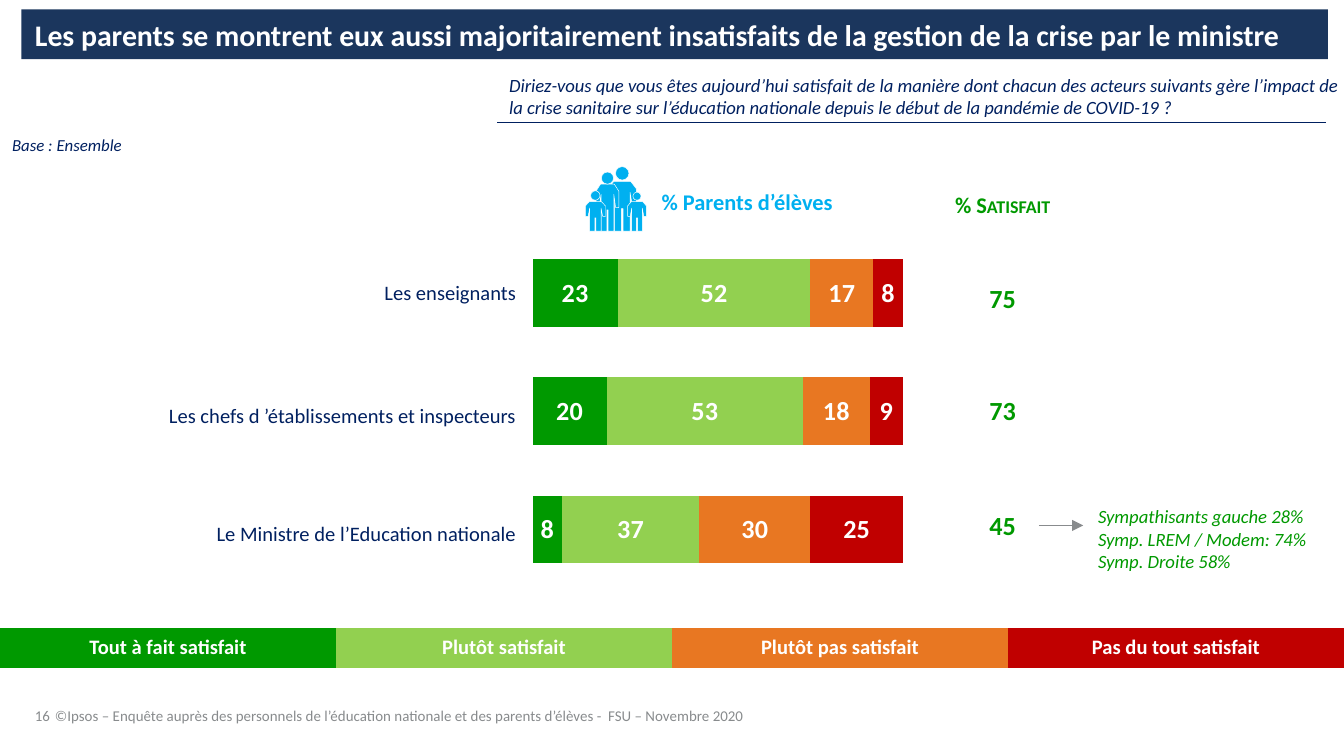
from lxml import etree
from pptx import Presentation
from pptx.chart.data import CategoryChartData
from pptx.dml.color import RGBColor
from pptx.enum.chart import XL_CHART_TYPE
from pptx.enum.shapes import MSO_CONNECTOR, MSO_SHAPE
from pptx.enum.text import MSO_ANCHOR, MSO_AUTO_SIZE, PP_ALIGN
from pptx.oxml import parse_xml
from pptx.oxml.ns import nsdecls, qn
from pptx.util import Inches, Pt

NAVY = RGBColor(0x1B, 0x36, 0x5D)
INK = RGBColor(0x00, 0x20, 0x60)
GREY = RGBColor(0x88, 0x8B, 0x8D)
SKY = RGBColor(0x00, 0xB0, 0xF0)
WHITE = RGBColor(0xFF, 0xFF, 0xFF)
GREEN = RGBColor(0x00, 0x99, 0x00)
LIME = RGBColor(0x92, 0xD0, 0x50)
ORANGE = RGBColor(0xE8, 0x77, 0x22)
RED = RGBColor(0xC0, 0x00, 0x00)

LEFT, CENTER, RIGHT = PP_ALIGN.LEFT, PP_ALIGN.CENTER, PP_ALIGN.RIGHT
TOP, MIDDLE, BOTTOM = MSO_ANCHOR.TOP, MSO_ANCHOR.MIDDLE, MSO_ANCHOR.BOTTOM
NO_AUTOFIT = MSO_AUTO_SIZE.NONE
STACKED_BAR = XL_CHART_TYPE.BAR_STACKED_100
STRAIGHT = MSO_CONNECTOR.STRAIGHT
OVAL = MSO_SHAPE.OVAL

FONT = "Calibri"
PLAIN_TABLE_STYLE = "{2D5ABB26-0587-4C30-8999-92F81FD0307C}"

ANSWERS = [
    ("Tout à fait satisfait", GREEN, (23, 20, 8)),
    ("Plutôt satisfait", LIME, (52, 53, 37)),
    ("Plutôt pas satisfait", ORANGE, (17, 18, 30)),
    ("Pas du tout satisfait", RED, (8, 9, 25)),
]
ACTORS = [
    "Les enseignants",
    "Les chefs d\u00a0’établissements et inspecteurs",
    "Le Ministre de l’Education nationale",
]
FAMILY = [
    (4.63, 1.24, 0.10, 0.21, 1.35),
    (4.52, 1.28, 0.09, 0.17, 1.37),
    (4.43, 1.42, 0.07, 0.15, 1.5),
    (4.74, 1.43, 0.06, 0.14, 1.5),
]
HALF_BODY = [(-0.3, 0), (-0.5, 0.15), (-0.5, 0.5), (-0.36, 0.5),
             (-0.28, 0.22), (-0.28, 1), (-0.03, 1), (-0.03, 0.55)]


def style_font(font, size, color, bold=False, italic=False):
    font.name = FONT
    font.size = Pt(size)
    font.color.rgb = color
    font.bold = bold
    font.italic = italic


def style_frame(frame, size, color, bold=False, italic=False, align=LEFT):
    for para in frame.paragraphs:
        para.alignment = align
        for span in para.runs:
            style_font(span.font, size, color, bold, italic)


def place(shape, area):
    shape.left, shape.top, shape.width, shape.height = map(Inches, area)


def add_title(page, text):
    title = page.shapes.title
    place(title, (0.16, 0.07, 9.72, 0.37))
    title.fill.solid()
    title.fill.fore_color.rgb = NAVY
    frame = title.text_frame
    frame.text = text
    frame.auto_size = NO_AUTOFIT
    frame.vertical_anchor = MIDDLE
    style_frame(frame, 16, WHITE, bold=True)


def add_text(page, area, text, size, color, anchor=TOP, inset=True, wrap=True, **style):
    box = page.shapes.add_textbox(*map(Inches, area))
    frame = box.text_frame
    frame.word_wrap = wrap
    frame.vertical_anchor = anchor
    if not inset:
        frame.margin_left = frame.margin_right = 0
        frame.margin_top = frame.margin_bottom = 0
    frame.text = text
    style_frame(frame, size, color, **style)
    return frame


def add_line(page, start, end, color, width, arrow=False):
    line = page.shapes.add_connector(STRAIGHT, *map(Inches, start + end))
    line.line.color.rgb = color
    line.line.width = Pt(width)
    if arrow:
        etree.SubElement(line.line._get_or_add_ln(), qn("a:tailEnd"), type="triangle")
    etree.SubElement(line._element.spPr, qn("a:effectLst"))


def add_table(page, area, heights, columns=1):
    frame = page.shapes.add_table(len(heights), columns, *map(Inches, area))
    table = frame.table
    table.first_row = table.horz_banding = False
    table._tbl.tblPr[0].text = PLAIN_TABLE_STYLE
    for row, height in zip(table.rows, heights):
        row.height = Inches(height)
    return table


def fill_cell(cell, text, size, color, fill=None, tight=True, **style):
    cell.text = text
    cell.vertical_anchor = MIDDLE
    if tight:
        cell.margin_left = cell.margin_right = cell.margin_top = Inches(0.01)
        cell.margin_bottom = 0
    if fill is None:
        cell.fill.background()
    else:
        cell.fill.solid()
        cell.fill.fore_color.rgb = fill
    style_frame(cell.text_frame, size, color, **style)


def add_legend(page):
    table = add_table(page, (0, 4.67, 10, 0.3), [0.3], len(ANSWERS))
    for cell, (label, color, _) in zip(table.iter_cells(), ANSWERS):
        fill_cell(cell, label, 11, WHITE, color, tight=False, bold=True, align=CENTER)


def add_actors(page):
    table = add_table(page, (1.1, 1.82, 2.75, 2.64), [0.71, 1.13, 0.8])
    for cell, actor in zip(table.iter_cells(), ACTORS):
        fill_cell(cell, actor, 11, INK, align=RIGHT)
    table.cell(2, 0).margin_bottom = Inches(0.18)


def add_totals(page):
    table = add_table(page, (6.97, 1.24, 0.98, 3.1), [0.57, 0.83, 0.83, 0.88])
    header, *cells = table.iter_cells()
    fill_cell(header, "% ", 12, GREEN, bold=True, align=CENTER)
    span = header.text_frame.paragraphs[0].add_run()
    span.text = "Satisfait"
    style_font(span.font, 12, GREEN, bold=True)
    span.font._element.set("cap", "small")
    very, fairly = ANSWERS[0][2], ANSWERS[1][2]
    for cell, pair in zip(cells, zip(very, fairly)):
        fill_cell(cell, str(sum(pair)), 14, GREEN, bold=True, align=CENTER)


def paint(shape, color):
    shape.shadow.inherit = False
    shape.fill.solid()
    shape.fill.fore_color.rgb = color
    shape.line.color.rgb = WHITE
    shape.line.width = Pt(0.25)


def add_person(page, center, head_top, head, width, shoulder, feet=1.72):
    outline = HALF_BODY + [(-x, y) for x, y in reversed(HALF_BODY)]
    points = [(Inches(center + x * width), Inches(shoulder + y * (feet - shoulder)))
              for x, y in outline]
    builder = page.shapes.build_freeform(*points[0])
    builder.add_line_segments(points[1:], close=True)
    paint(builder.convert_to_shape(), SKY)
    area = (center - head / 2, head_top, head, head)
    paint(page.shapes.add_shape(OVAL, *map(Inches, area)), SKY)


def add_answer_chart(page):
    data = CategoryChartData()
    data.categories = ["1", "2", "3"]
    for number, (_, _, values) in enumerate(ANSWERS, 1):
        data.add_series(f"Series {number}", values)
    area = map(Inches, (2.89, 1.74, 3.83, 2.64))
    chart = page.shapes.add_chart(STACKED_BAR, *area, data).chart
    chart.has_legend = chart.has_title = False
    chart.font.name = FONT
    chart.font.size = Pt(10)
    chart.category_axis.visible = chart.value_axis.visible = False
    chart.category_axis.reverse_order = True
    chart.value_axis.has_major_gridlines = False
    chart.value_axis.maximum_scale = 1
    plot = chart.plots[0]
    plot.gap_width = 75
    plot.overlap = 100
    plot.vary_by_categories = False
    for series, (_, color, _) in zip(plot.series, ANSWERS):
        series.format.fill.solid()
        series.format.fill.fore_color.rgb = color
        series.data_labels.show_value = True
        style_font(series.data_labels.font, 14, WHITE, bold=True)
    set_plot_area(chart, x=0.28, y=0, w=0.72, h=1)


def set_plot_area(chart, **fractions):
    plot_area = chart._chartSpace.chart.plotArea
    for layout in plot_area.findall(qn("c:layout")):
        plot_area.remove(layout)
    modes = '<c:layoutTarget val="inner"/><c:xMode val="edge"/><c:yMode val="edge"/>'
    sizes = "".join(f'<c:{key} val="{value}"/>' for key, value in fractions.items())
    plot_area.insert(0, parse_xml(
        f'<c:layout {nsdecls("c")}><c:manualLayout>{modes}{sizes}</c:manualLayout></c:layout>'))


def main():
    deck = Presentation()
    deck.slide_width = Inches(10)
    deck.slide_height = deck.slide_width * 9 // 16
    page = deck.slides.add_slide(deck.slide_layouts[5])
    add_title(page, "Les parents se montrent eux aussi majoritairement insatisfaits "
                    "de la gestion de la crise par le ministre")
    number = add_text(page, (0.26, 5.13, 0.34, 0.26), "16", 8, GREY, BOTTOM, False, False)
    number.paragraphs[0].line_spacing = 0.85
    add_text(page, (3.69, 0.47, 6.45, 0.49),
             "Diriez-vous que vous êtes aujourd’hui satisfait de la manière dont chacun "
             "des acteurs suivants gère l’impact de la crise sanitaire sur l’éducation "
             "nationale depuis le début de la pandémie de COVID-19 ?",
             10, INK, MIDDLE, italic=True)
    add_line(page, (3.7, 0.91), (9.87, 0.91), INK, 0.5)
    add_text(page, (0.09, 1, 1.18, 0.15), "Base : Ensemble", 9, INK, inset=False, italic=True)
    add_legend(page)
    add_text(page, (0.31, 5.21, 7.39, 0.2),
             "©Ipsos – Enquête auprès des personnels de l’éducation nationale "
             "et des parents d’élèves -  FSU – Novembre 2020", 8, GREY)
    add_actors(page)
    for person in FAMILY:
        add_person(page, *person)
    add_answer_chart(page)
    add_text(page, (4.66, 1.35, 1.8, 0.3), "% Parents d’élèves", 12, SKY, bold=True, align=CENTER)
    add_totals(page)
    add_text(page, (8.17, 3.76, 1.83, 0.5),
             "Sympathisants gauche 28%\nSymp. LREM / Modem: 74%\nSymp. Droite 58%",
             10, GREEN, inset=False, italic=True)
    add_line(page, (7.73, 3.91), (8.06, 3.91), GREY, 1, arrow=True)
    deck.save("out.pptx")


if __name__ == "__main__":
    main()
